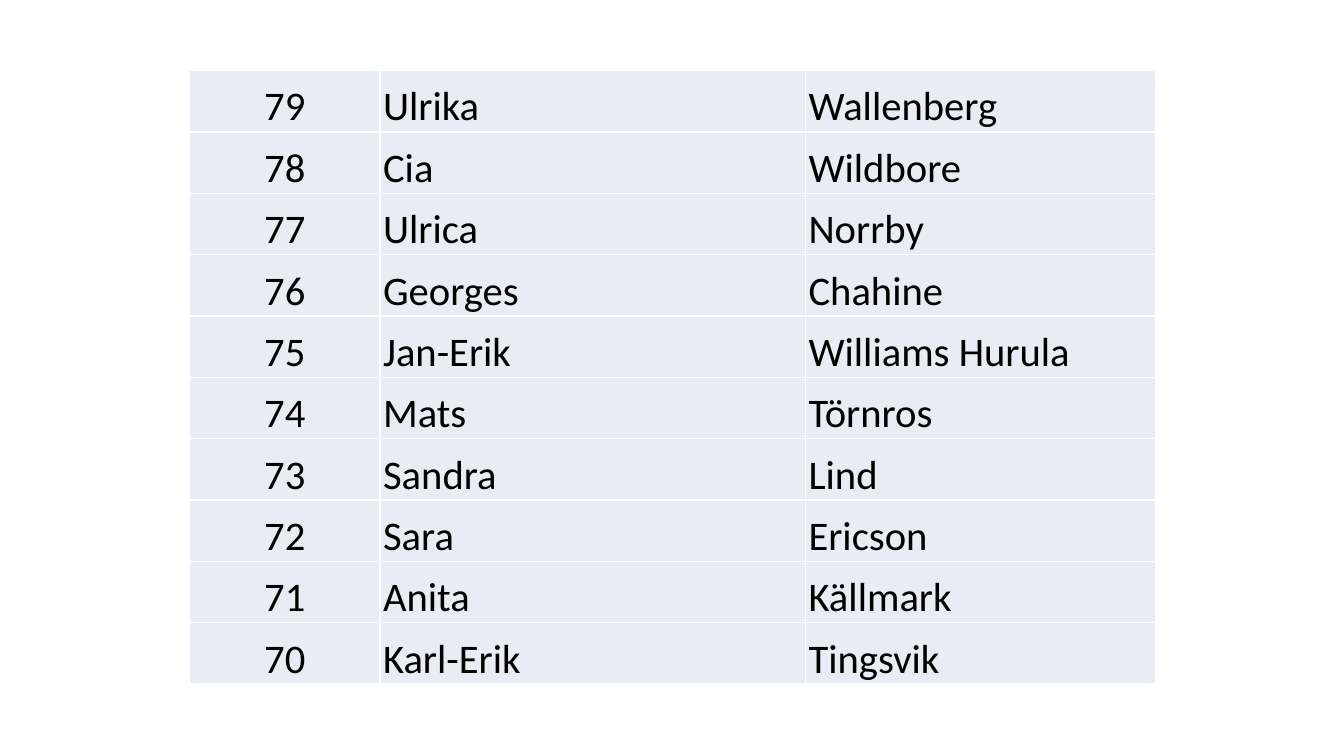
from lxml import etree
from pptx import Presentation
from pptx.dml.color import RGBColor
from pptx.enum.text import MSO_ANCHOR, PP_ALIGN
from pptx.oxml.ns import qn
from pptx.util import Inches, Pt

BOTTOM = MSO_ANCHOR.BOTTOM
CENTER, LEFT = PP_ALIGN.CENTER, PP_ALIGN.LEFT
COLORS = {"text": "000000", "cell": "E9EBF5", "border": "FFFFFF"}
FONT = "Calibri"
FIRST_NUMBER = 79
PEOPLE = [
    ("Ulrika", "Wallenberg"),
    ("Cia", "Wildbore"),
    ("Ulrica", "Norrby"),
    ("Georges", "Chahine"),
    ("Jan-Erik", "Williams Hurula"),
    ("Mats", "Törnros"),
    ("Sandra", "Lind"),
    ("Sara", "Ericson"),
    ("Anita", "Källmark"),
    ("Karl-Erik", "Tingsvik"),
]
COLUMNS = [(1.89, CENTER), (4.22, LEFT), (3.47, LEFT)]
TABLE_LEFT, TABLE_TOP, TABLE_HEIGHT = 1.88, 0.7, 6.09


def add_borders(cell):
    tc_pr = cell._tc.get_or_add_tcPr()
    for side in ("a:lnL", "a:lnR", "a:lnT", "a:lnB"):
        line = etree.SubElement(tc_pr, qn(side), w=str(Pt(1)))
        fill = etree.SubElement(line, qn("a:solidFill"))
        etree.SubElement(fill, qn("a:srgbClr"), val=COLORS["border"])


def fill_cell(cell, text, align):
    add_borders(cell)
    cell.fill.solid()
    cell.fill.fore_color.rgb = RGBColor.from_string(COLORS["cell"])
    cell.margin_left = cell.margin_right = cell.margin_top = Inches(0.03)
    cell.margin_bottom = 0
    cell.vertical_anchor = BOTTOM
    cell.text = text
    p = cell.text_frame.paragraphs[0]
    p.alignment = align
    p.font.name = FONT
    p.font.size = Pt(29)
    p.font.color.rgb = RGBColor.from_string(COLORS["text"])


def main():
    prs = Presentation()
    prs.slide_width, prs.slide_height = Inches(13.33), Inches(7.5)
    s = prs.slides.add_slide(prs.slide_layouts[6])
    width = sum(w for w, _ in COLUMNS)
    table = s.shapes.add_table(
        len(PEOPLE), len(COLUMNS), Inches(TABLE_LEFT), Inches(TABLE_TOP),
        Inches(width), Inches(TABLE_HEIGHT)).table
    table.first_row = table.horz_banding = False
    for col, (w, _) in zip(table.columns, COLUMNS):
        col.width = Inches(w)
    for i, person in enumerate(PEOPLE):
        texts = (str(FIRST_NUMBER - i), *person)
        for j, (text, (_, align)) in enumerate(zip(texts, COLUMNS)):
            fill_cell(table.cell(i, j), text, align)
    prs.save("out.pptx")


if __name__ == "__main__":
    main()
